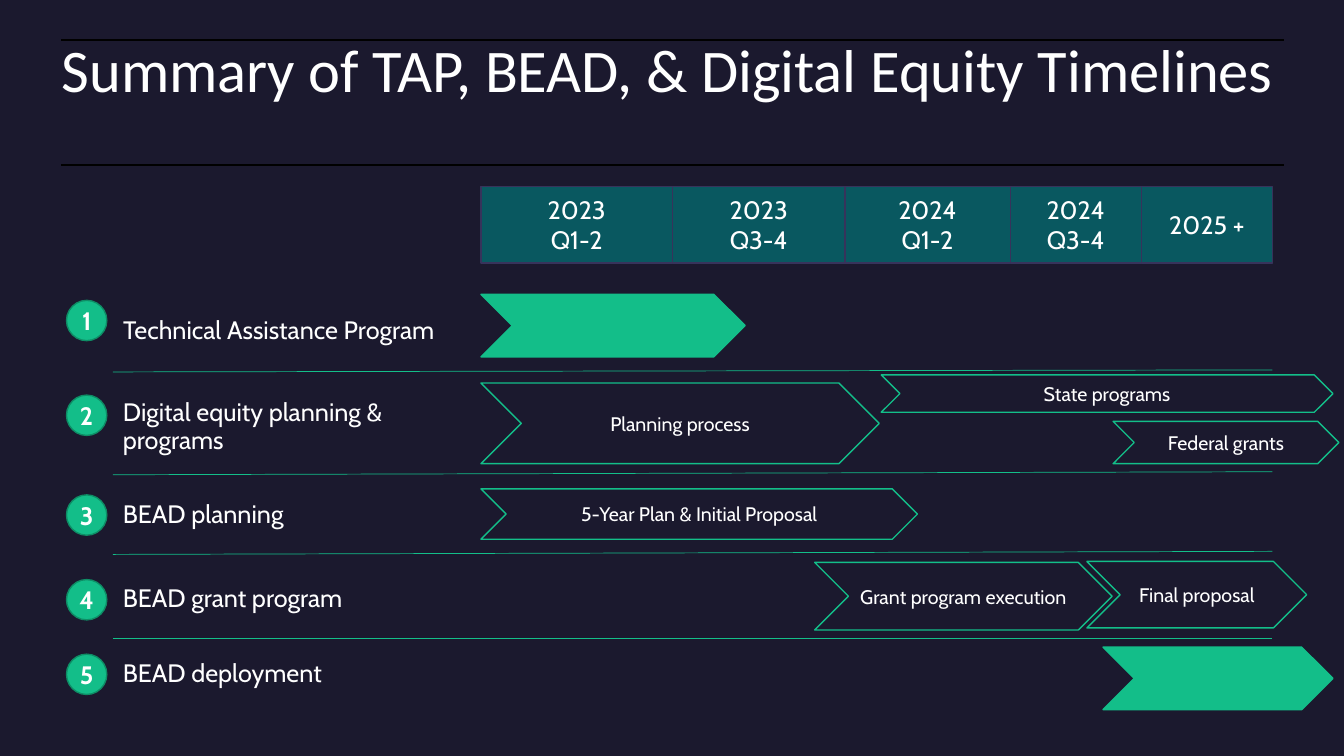
from lxml import etree
from pptx import Presentation
from pptx.dml import color
from pptx.enum import shapes, text
from pptx.oxml import ns
from pptx.util import Inches, Pt

NAVY, WHITE, BLACK = "1B192E", "FFFFFF", "000000"
GREEN, DARK_GREEN = "13BE89", "0E8D65"
TEAL, PURPLE = "095860", "37335B"
LEFT, RIGHT, CHART_LEFT = 0.61, 12.73, 4.77
LABEL_LEFT, LABEL_WIDTH = 1.12, 3.65
BADGE_SIZE = 0.4

PERIODS = [
    ("2023\nQ1-2", 1.9),
    ("2023\nQ3-4", 1.71),
    ("2024\nQ1-2", 1.64),
    ("2024\nQ3-4", 1.3),
    ("2025 +", 1.3),
]
BADGE_TOPS = [2.98, 3.92, 4.91, 5.75, 6.49]
LABELS = [
    ("Digital equity planning & programs", 3.9),
    ("BEAD planning", 4.77),
    ("BEAD grant program", 5.61),
    ("BEAD deployment", 6.35),
]
DIVIDERS = [(3.69, 3.67), (4.71, 4.68), (5.5, 5.47), (6.33, 6.33)]
PHASES = [
    ("", CHART_LEFT, 2.92, 2.62, 0.62),
    ("Planning process", CHART_LEFT, 3.8, 3.95, 0.8),
    ("Grant program execution", 8.08, 5.58, 2.95, 0.67),
    ("Final proposal", 10.78, 5.57, 2.18, 0.66),
    ("", 10.94, 6.42, 2.28, 0.62),
    ("State programs", 8.74, 3.72, 4.48, 0.37),
    ("Federal grants", 11.04, 4.18, 2.24, 0.42),
    ("5-Year Plan & Initial Proposal", CHART_LEFT, 4.85, 4.33, 0.5),
]


def rgb(value):
    return color.RGBColor.from_string(value)


def write(box, words, size=18, font="Cabin", bold=False, spacing=1.0, after=0,
          align=text.PP_ALIGN.LEFT, anchor=text.MSO_ANCHOR.MIDDLE, inset=None):
    """Put one paragraph per line of words into the box."""
    frame = box.text_frame
    frame.word_wrap = True
    frame.auto_size = text.MSO_AUTO_SIZE.NONE
    frame.vertical_anchor = anchor
    if inset is not None:
        frame.margin_left = frame.margin_right = Inches(inset)
        frame.margin_top = frame.margin_bottom = Inches(inset)
    for index, line in enumerate(words.split("\n")):
        para = frame.add_paragraph() if index else frame.paragraphs[0]
        para.alignment = align
        para.line_spacing = spacing
        para.space_before, para.space_after = Pt(0), Pt(after)
        span = para.add_run()
        span.text = line
        span.font.size, span.font.name, span.font.bold = Pt(size), font, bold
        span.font.color.rgb = rgb(WHITE)


def place(box, left, top, width, height):
    box.left, box.top = Inches(left), Inches(top)
    box.width, box.height = Inches(width), Inches(height)


def add_line(page, left, top, right, bottom, stroke, weight):
    line = page.shapes.add_connector(
        shapes.MSO_CONNECTOR.STRAIGHT,
        Inches(left), Inches(top), Inches(right), Inches(bottom))
    line.line.color.rgb = rgb(stroke)
    line.line.width = Pt(weight)
    etree.SubElement(line.element.spPr, ns.qn("a:effectLst"))


def add_block(page, kind, left, top, width, height, stroke, fill=None):
    block = page.shapes.add_shape(
        kind, Inches(left), Inches(top), Inches(width), Inches(height))
    block.shadow.inherit = False
    block.line.color.rgb = rgb(stroke)
    block.line.width = Pt(1)
    if fill:
        block.fill.solid()
        block.fill.fore_color.rgb = rgb(fill)
    else:
        block.fill.background()
    return block


def add_heading(page):
    for top in (1.64, 0.4):
        add_line(page, LEFT, top, RIGHT, top, BLACK, 1.5)
    title = page.shapes.title
    place(title, LEFT, 0.4, 12.11, 0.74)
    write(title, "Summary of TAP, BEAD, & Digital Equity Timelines", size=43.2,
          font="Calibri", spacing=0.9, anchor=text.MSO_ANCHOR.TOP, inset=0)


def add_labels(page):
    body = page.placeholders[1]
    place(body, 1.22, 2.84, 3.55, 0.82)
    write(body, "Technical Assistance Program", spacing=1.1, after=8, inset=0)
    properties = body.text_frame.paragraphs[0]._p.get_or_add_pPr()
    properties.set("marL", "0")
    properties.set("indent", "0")
    etree.SubElement(properties, ns.qn("a:buNone"))
    for words, top in LABELS:
        box = page.shapes.add_textbox(
            Inches(LABEL_LEFT), Inches(top), Inches(LABEL_WIDTH), Inches(0.68))
        write(box, words, spacing=0.9)


def add_badges(page):
    for number, top in enumerate(BADGE_TOPS, 1):
        badge = add_block(page, shapes.MSO_SHAPE.OVAL, 0.66, top,
                          BADGE_SIZE, BADGE_SIZE, DARK_GREEN, GREEN)
        write(badge, str(number), bold=True, align=text.PP_ALIGN.CENTER, inset=0)


def add_periods(page):
    left = CHART_LEFT
    for words, width in PERIODS:
        period = add_block(page, shapes.MSO_SHAPE.RECTANGLE, left, 1.85,
                           width, 0.76, PURPLE, TEAL)
        write(period, words, align=text.PP_ALIGN.CENTER)
        left += width


def add_phases(page):
    for words, left, top, width, height in PHASES:
        phase = add_block(page, shapes.MSO_SHAPE.CHEVRON, left, top, width,
                          height, GREEN, None if words else GREEN)
        if words:
            write(phase, words, size=14, align=text.PP_ALIGN.CENTER)


def main():
    deck = Presentation()
    deck.slide_width, deck.slide_height = Inches(13.33), Inches(7.5)
    page = deck.slides.add_slide(deck.slide_layouts[1])
    page.background.fill.solid()
    page.background.fill.fore_color.rgb = rgb(NAVY)
    add_heading(page)
    for start, end in DIVIDERS:
        add_line(page, LABEL_LEFT, start, 12.62, end, GREEN, 0.5)
    add_labels(page)
    add_badges(page)
    add_periods(page)
    add_phases(page)
    deck.save("out.pptx")


if __name__ == "__main__":
    main()
